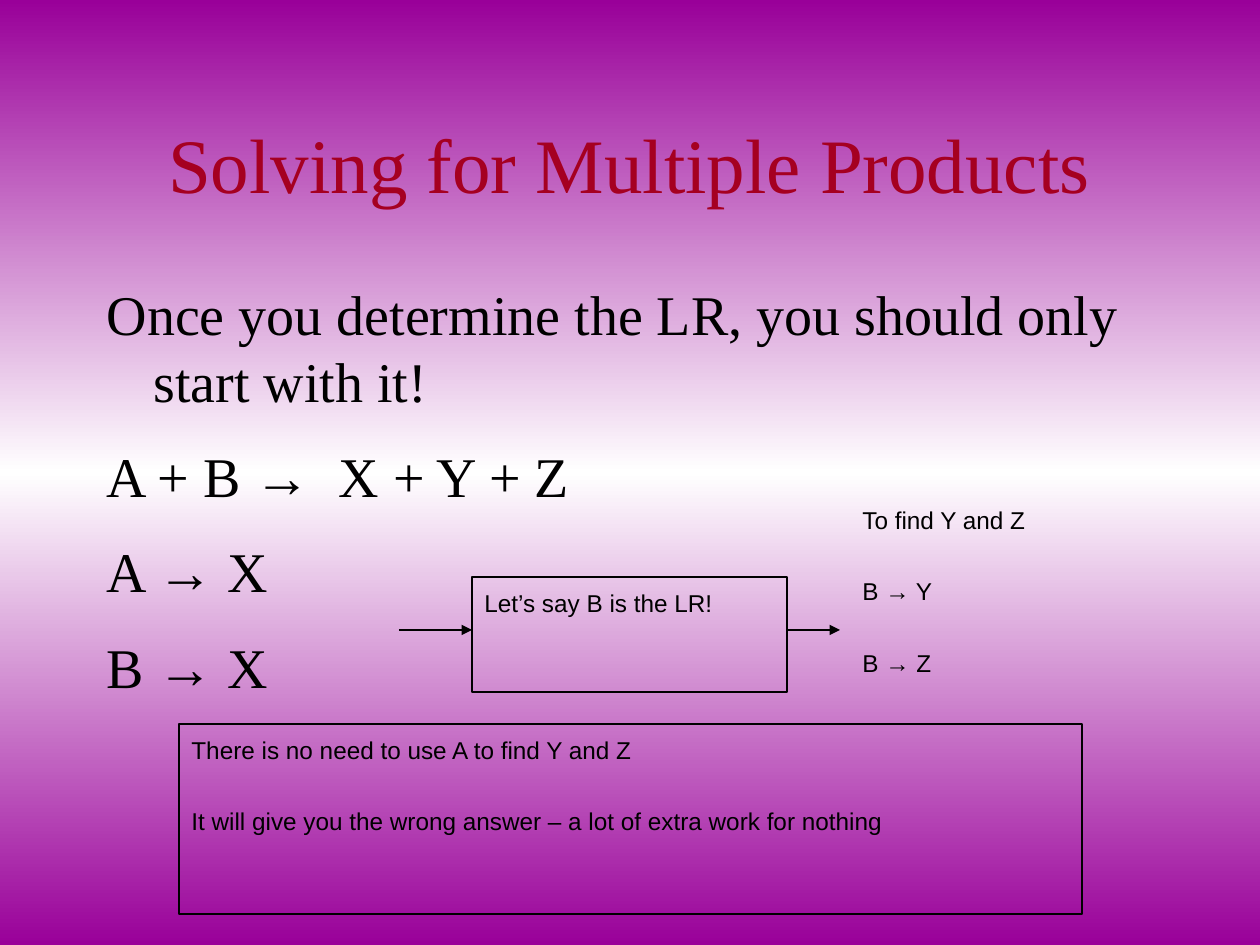
"""Build the slide on solving for multiple products."""
from copy import deepcopy

from pptx import Presentation, util as u
from pptx.dml.color import RGBColor
from pptx.enum import shapes, text
from pptx.oxml.ns import qn
from lxml import etree

TITLE = "Solving for Multiple Products"
BODY = [
    "Once you determine the LR, you should only start with it!",
    "A + B →  X + Y + Z",
    "A → X",
    "B → X",
]
NOTES = [
    ((472, 577, 315, 115), True, ["Let’s say B is the LR!"]),
    ((850, 494, 336, 214), False, ["To find Y and Z", "B → Y", "B → Z"]),
    ((179, 724, 903, 190), True, [
        "There is no need to use A to find Y and Z",
        "It will give you the wrong answer – a lot of extra work for nothing",
    ]),
]
ARROWS = [(787, 840), (399, 472)]
LEVEL = 630

BLACK = RGBColor(0, 0, 0)
WHITE = RGBColor(255, 255, 255)
RED = RGBColor(0xA5, 0x00, 0x21)
PURPLE = RGBColor(0x99, 0x00, 0x99)
STOPS = [(0, PURPLE), (0.5, WHITE), (1, PURPLE)]
SERIF, SANS = "Times New Roman", "Arial"
PX = 914400 // 126


def px(*vals):
    return [val * PX for val in vals]


def place(shape, box):
    shape.left, shape.top, shape.width, shape.height = px(*box)


def write(shape, lines, font=SERIF, size=32, color=BLACK, align=text.PP_ALIGN.LEFT,
          anchor=text.MSO_ANCHOR.TOP, hang=0, gap=True, base=0):
    frame = shape.text_frame
    frame.text = "\n".join(lines)
    frame.word_wrap = True
    frame.auto_size = text.MSO_AUTO_SIZE.NONE
    frame.vertical_anchor = anchor
    for para in frame.paragraphs:
        para.alignment = align
        props = para._p.get_or_add_pPr()
        props.set("marL", str(hang * PX))
        props.set("indent", str(-hang * PX))
        if gap:
            space = etree.SubElement(props, qn("a:spcBef"))
            etree.SubElement(space, qn("a:spcPct"), val="50000")
        etree.SubElement(props, qn("a:buNone"))
        for run in para.runs:
            run.font.name, run.font.size = font, u.Pt(size)
            run.font.color.rgb = color
            if base:
                run.font._element.set("baseline", str(base))


def paint(slide):
    fill = slide.background.fill
    fill.gradient()
    fill.gradient_angle = 270
    grads = slide.element.find(".//" + qn("a:gsLst"))
    grads.append(deepcopy(grads[-1]))
    for stop, (pos, color) in zip(fill.gradient_stops, STOPS):
        stop.position, stop.color.rgb = pos, color


def outline(line):
    line.color.rgb, line.width = BLACK, u.Pt(0.75)


def note(slide, box, framed, lines):
    if framed:
        shape = slide.shapes.add_shape(shapes.MSO_SHAPE.RECTANGLE, *px(*box))
        shape.shadow.inherit = False
        shape.fill.background()
        outline(shape.line)
    else:
        shape = slide.shapes.add_textbox(*px(*box))
    write(shape, lines, font=SANS, size=24, base=30000)


def arrow(slide, start, end):
    link = slide.shapes.add_connector(
        shapes.MSO_CONNECTOR.STRAIGHT, *px(start, LEVEL, end, LEVEL))
    outline(link.line)
    etree.SubElement(link.line._get_or_add_ln(), qn("a:tailEnd"), type="triangle")
    etree.SubElement(link._element.spPr, qn("a:effectLst"))


def main():
    deck = Presentation()
    deck.slide_width, deck.slide_height = px(1260, 945)
    slide = deck.slides.add_slide(deck.slide_layouts[1])
    paint(slide)
    title, body = slide.placeholders
    place(title, (94, 84, 1071, 158))
    write(title, [TITLE], size=44, color=RED, align=text.PP_ALIGN.CENTER,
          anchor=text.MSO_ANCHOR.MIDDLE, gap=False)
    place(body, (94, 273, 1071, 567))
    write(body, BODY, hang=47)
    for item in NOTES:
        note(slide, *item)
    for ends in ARROWS:
        arrow(slide, *ends)
    deck.save("out.pptx")


if __name__ == "__main__":
    main()
